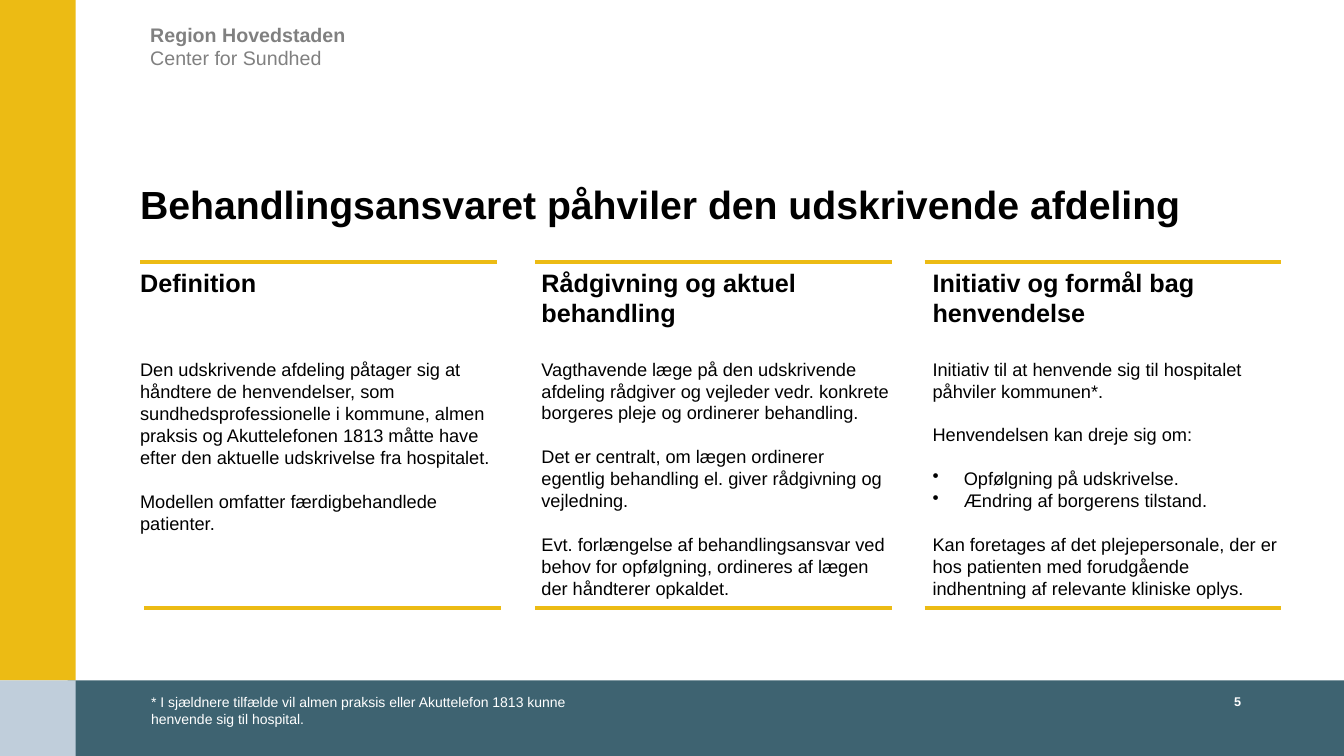
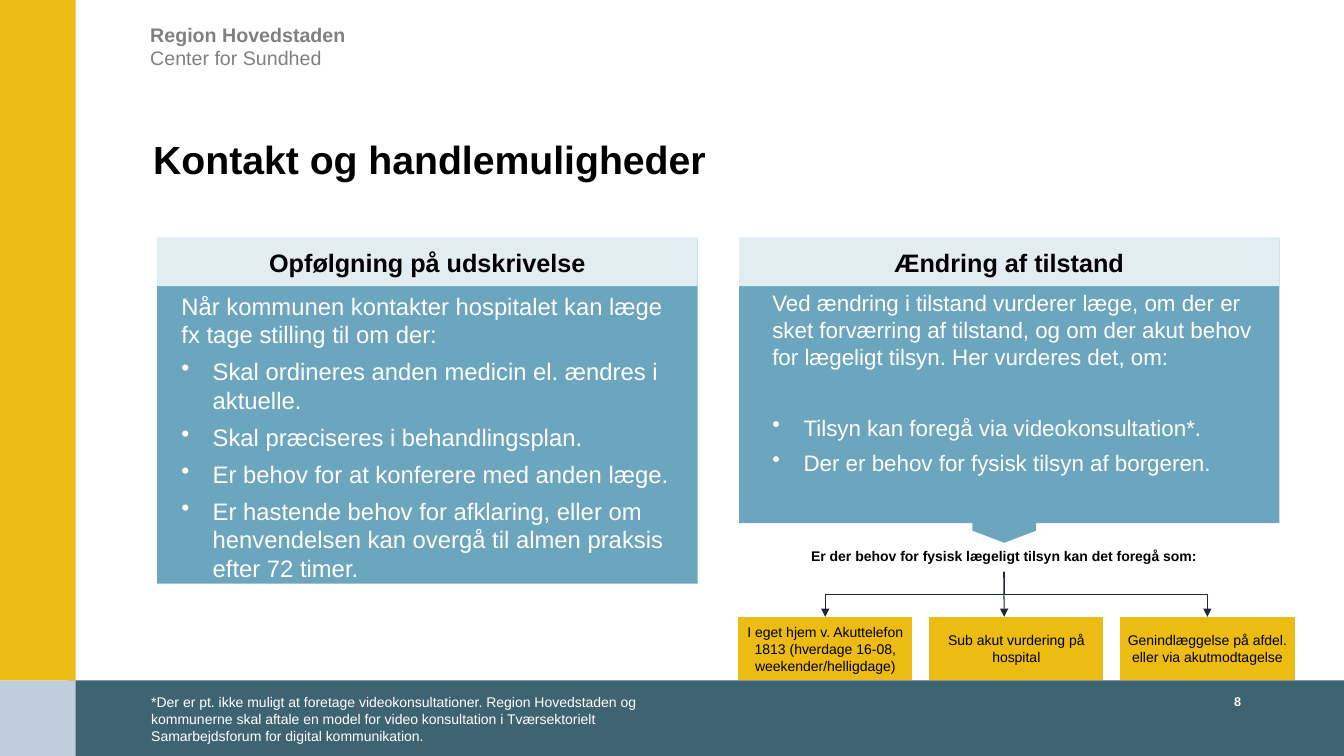
import pptx
import pptx.util
import pptx.dml.color
import pptx.enum.shapes
import pptx.enum.text
import pptx.oxml.ns
import lxml.etree

Inches = pptx.util.Inches
Pt = pptx.util.Pt
RGBColor = pptx.dml.color.RGBColor
Shape = pptx.enum.shapes.MSO_SHAPE
Link = pptx.enum.shapes.MSO_CONNECTOR
Align = pptx.enum.text.PP_ALIGN
Anchor = pptx.enum.text.MSO_ANCHOR

GOLD = RGBColor(0xEC, 0xBB, 0x14)
TEAL = RGBColor(0x3E, 0x63, 0x71)
MIST = RGBColor(0xC0, 0xCE, 0xDB)
BLUE = RGBColor(0x6C, 0xA5, 0xBE)
PALE = RGBColor(0xE2, 0xED, 0xF2)
INK = RGBColor(0x1F, 0x29, 0x36)
GREY = RGBColor(0x80, 0x80, 0x80)
BLACK = RGBColor(0, 0, 0)
WHITE = RGBColor(0xFF, 0xFF, 0xFF)
FONT = "Arial"
INDENT = 0.31


def element(parent, tag, **values):
    return lxml.etree.SubElement(parent, pptx.oxml.ns.qn(tag), **values)


def write(frame, words, size=10, color=BLACK, bold=False, align=Align.LEFT,
          before=0, after=0, lines=1.0, bullet=False):
    para = frame.add_paragraph() if frame.text else frame.paragraphs[0]
    if bullet:
        props = para._p.get_or_add_pPr()
        props.set("marL", str(Inches(INDENT)))
        props.set("indent", str(-Inches(INDENT)))
        element(props, "a:buChar", char="•")
    para.alignment = align
    para.line_spacing = lines
    para.space_before = Pt(before)
    para.space_after = Pt(after)
    run = para.add_run()
    run.text = words
    run.font.name = FONT
    run.font.size = Pt(size)
    run.font.bold = bold
    run.font.color.rgb = color


def setup(shape, anchor):
    frame = shape.text_frame
    frame.word_wrap = True
    frame.vertical_anchor = anchor
    frame.margin_left = frame.margin_right = 0
    frame.margin_top = frame.margin_bottom = 0
    return frame


def area(slide, box, anchor=Anchor.TOP):
    shape = slide.shapes.add_textbox(*map(Inches, box))
    setup(shape, anchor)
    return shape


def label(slide, box, words, anchor=Anchor.TOP, **style):
    shape = area(slide, box, anchor)
    write(shape.text_frame, words, **style)
    return shape


def block(slide, box, fill, kind=Shape.RECTANGLE, words=None, **style):
    shape = slide.shapes.add_shape(kind, *map(Inches, box))
    shape.shadow.inherit = False
    shape.fill.solid()
    shape.fill.fore_color.rgb = fill
    shape.line.fill.background()
    if words:
        write(setup(shape, Anchor.MIDDLE), words, align=Align.CENTER, **style)
    return shape


def line(slide, start, end, color, width, kind=Link.STRAIGHT, arrow=False):
    link = slide.shapes.add_connector(kind, *map(Inches, start + end))
    link.line.color.rgb = color
    link.line.width = Pt(width)
    if arrow:
        element(link.line._get_or_add_ln(), "a:tailEnd", type="triangle")
    element(link._element.spPr, "a:effectLst")
    return link


def bend(slide, start, end):
    (x1, y1), (x2, y2) = start, end
    mid_x, mid_y = (x1 + x2) / 2, (y1 + y2) / 2
    half_w, half_h = (y2 - y1) / 2, abs(x2 - x1) / 2
    link = line(slide, (mid_x - half_w, mid_y - half_h),
                (mid_x + half_w, mid_y + half_h), INK, 0.75, Link.ELBOW, True)
    xfrm = link._element.spPr.find(pptx.oxml.ns.qn("a:xfrm"))
    right = x2 > x1
    xfrm.set("rot", str((270 if right else 90) * 60000))
    if right:
        xfrm.set("flipH", "1")


def base(deck, title, box, number, note, span):
    slide = deck.slides.add_slide(deck.slide_layouts[6])
    label(slide, (1.49, 0.23, 5.63, 0.24), "Region Hovedstaden",
          size=14, color=GREY, bold=True)
    label(slide, (1.49, 0.46, 5.63, 0.46), "Center for Sundhed",
          size=14, color=GREY)
    block(slide, (0.67, 6.75, 12.66, 0.75), TEAL)
    block(slide, (0, 0, 0.75, 6.75), GOLD)
    block(slide, (0, 6.75, 0.75, 0.75), MIST)
    label(slide, box, title, anchor=Anchor.BOTTOM, size=28, bold=True,
          lines=0.85)
    label(slide, (11.9, 6.88, 0.75, 0.2), number, size=9, color=WHITE,
          bold=True, align=Align.CENTER)
    label(slide, (1.5, 6.88, span, 0.2), note, color=WHITE)
    return slide


def column(slide, box, inset, shift, head, gap, items):
    left, top, width, height = box
    for x, y in ((left, top), (left + shift, top + height)):
        line(slide, (x, y), (x + width, y), GOLD, 3)
    frame = area(slide, (left + inset, top + 0.05, width - inset, 2.68)).text_frame
    write(frame, head, size=18, bold=True)
    for index, (words, bullet, apart) in enumerate(items):
        before = gap if index == 0 else 15.7 if apart else 0
        write(frame, words, size=13, before=before, bullet=bullet)


def panel(slide, box, head, inner, size, items):
    left, top, width, height = box
    x, y, span, depth = inner
    block(slide, box, BLUE)
    block(slide, (left, top, width, 0.48), PALE, words=head, size=18, bold=True)
    frame = area(slide, (left + x, top + y, span, depth)).text_frame
    for words, bullet, before in items:
        write(frame, words, size=size, color=WHITE, bullet=bullet,
              before=before, after=6)


def branch(slide, box, question, options):
    left, top, width, height = box
    ask = label(slide, (left + 0.43, top, 4.41, 0.24), question, bold=True,
                align=Align.CENTER)
    start = (left + 2.64, top + 0.24)
    row = top + height - 0.63
    wide = 1.73
    step = (width - wide) / (len(options) - 1)
    for index, words in enumerate(options):
        x = left + index * step
        block(slide, (x, row, wide, 0.63), GOLD, Shape.FLOWCHART_PROCESS, words)
        if index != 1:
            bend(slide, start, (x + wide / 2, row))
    link = line(slide, start, (start[0], row), INK, 0.75, arrow=True)
    link.begin_connect(ask, 2)


def duty(deck):
    slide = base(deck, "Behandlingsansvaret påhviler den udskrivende afdeling",
                 (1.39, 1.35, 11.15, 0.91), "5",
                 "* I sjældnere tilfælde vil almen praksis eller Akuttelefon 1813 "
                 "kunne henvende sig til hospital.", 4.13)
    columns = [
        (1.39, 0, 0.04, "Definition", 43.8, [
            ("Den udskrivende afdeling påtager sig at håndtere de henvendelser, "
             "som sundhedsprofessionelle i kommune, almen praksis og "
             "Akuttelefonen 1813 måtte have efter den aktuelle udskrivelse fra "
             "hospitalet.", False, True),
            ("Modellen omfatter færdigbehandlede patienter.", False, True)]),
        (5.31, 0.06, 0, "Rådgivning og aktuel behandling", 21.7, [
            ("Vagthavende læge på den udskrivende afdeling rådgiver og vejleder "
             "vedr. konkrete borgeres pleje og ordinerer behandling.", False, True),
            ("Det er centralt, om lægen ordinerer egentlig behandling el. giver "
             "rådgivning og vejledning.", False, True),
            ("Evt. forlængelse af behandlingsansvar ved behov for opfølgning, "
             "ordineres af lægen der håndterer opkaldet.", False, True)]),
        (9.17, 0.08, 0, "Initiativ og formål bag henvendelse", 21.7, [
            ("Initiativ til at henvende sig til hospitalet påhviler kommunen*.",
             False, True),
            ("Henvendelsen kan dreje sig om:", False, True),
            ("Opfølgning på udskrivelse.", True, True),
            ("Ændring af borgerens tilstand.", True, False),
            ("Kan foretages af det plejepersonale, der er hos patienten med "
             "forudgående indhentning af relevante kliniske oplys.", False, True)]),
    ]
    for left, *parts in columns:
        column(slide, (left, 2.6, 3.54, 3.43), *parts)


def contact(deck):
    slide = base(deck, "Kontakt og handlemuligheder", (1.52, 0.9, 10.13, 0.91),
                 "8",
                 "*Der er pt. ikke muligt at foretage videokonsultationer. Region "
                 "Hovedstaden og kommunerne skal aftale en model for video "
                 "konsultation i Tværsektorielt Samarbejdsforum for digital "
                 "kommunikation.", 5.42)
    branch(slide, (7.32, 5.43, 5.52, 1.32),
           "Er der behov for fysisk lægeligt tilsyn kan det foregå som:",
           ["I eget hjem v. Akuttelefon 1813 (hverdage 16-08, weekender/helligdage)",
            "Sub akut vurdering på hospital",
            "Genindlæggelse på afdel. eller via akutmodtagelse"])
    block(slide, (9.84, 4.95, 0.24, 0.63), BLUE, Shape.PENTAGON).rotation = 90
    panel(slide, (7.33, 2.36, 5.36, 2.83), "Ændring af tilstand",
          (0.33, 0.51, 4.85, 2.06), 16, [
              ("Ved ændring i tilstand vurderer læge, om der er sket forværring "
               "af tilstand, og om der akut behov for lægeligt tilsyn. Her "
               "vurderes det, om:", False, 0),
              ("Tilsyn kan foregå via videokonsultation*.", True, 25.3),
              ("Der er behov for fysisk tilsyn af borgeren.", True, 0)])
    panel(slide, (1.56, 2.36, 5.36, 3.43), "Opfølgning på udskrivelse",
          (0.24, 0.53, 4.96, 2.26), 17, [
              ("Når kommunen kontakter hospitalet kan læge fx tage stilling til "
               "om der:", False, 0),
              ("Skal ordineres anden medicin el. ændres i aktuelle.", True, 0),
              ("Skal præciseres i behandlingsplan.", True, 0),
              ("Er behov for at konferere med anden læge.", True, 0),
              ("Er hastende behov for afklaring, eller om henvendelsen kan "
               "overgå til almen praksis efter 72 timer.", True, 0)])


def main():
    deck = pptx.Presentation()
    deck.slide_width = Inches(13.33)
    deck.slide_height = Inches(7.5)
    duty(deck)
    contact(deck)
    deck.save("out.pptx")


if __name__ == "__main__":
    main()
